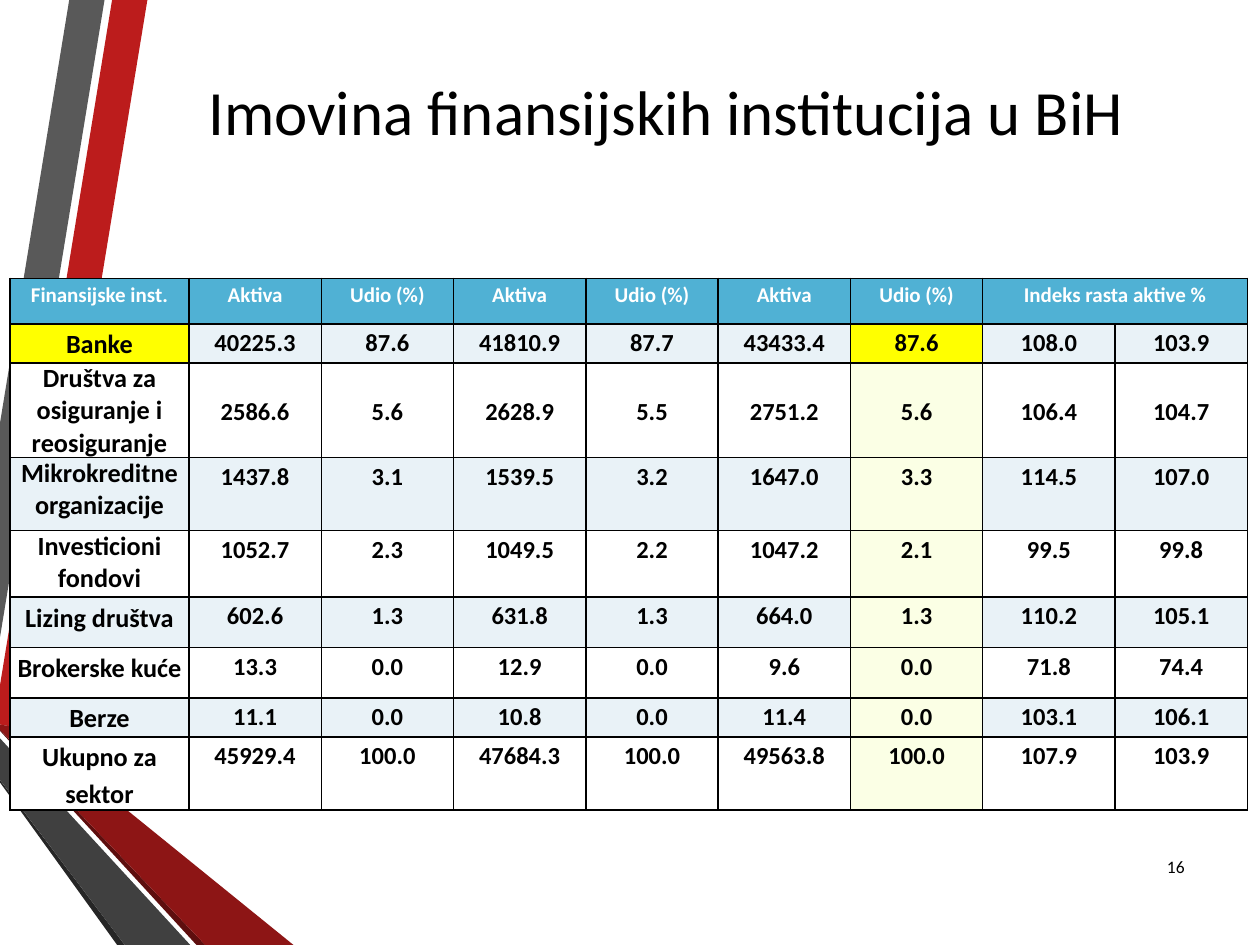
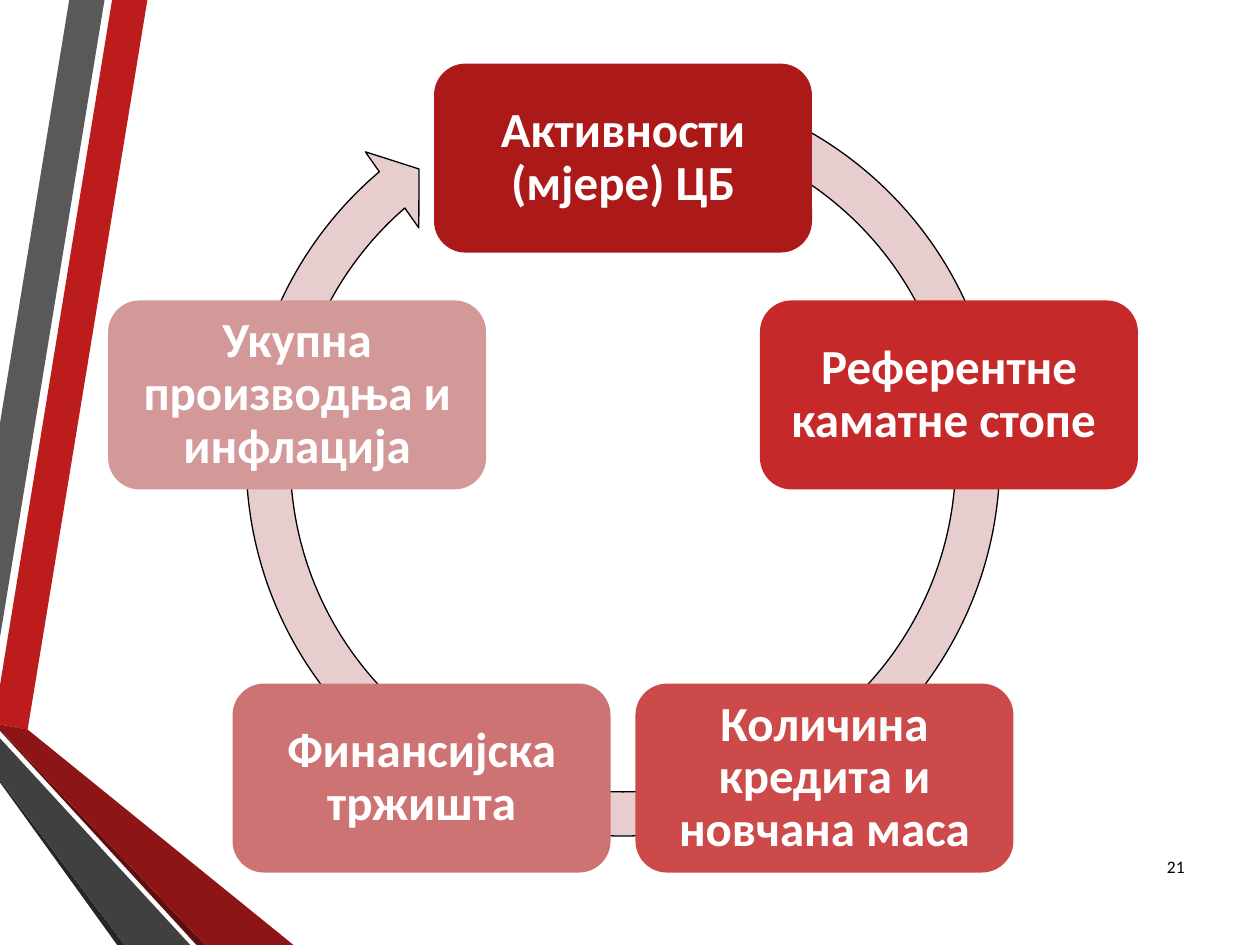
"""Build two slides on financial institutions and monetary policy."""
import math
from dataclasses import dataclass

from lxml import etree
from pptx import Presentation
from pptx.dml.color import RGBColor
from pptx.enum import shapes, text
from pptx.oxml import ns
from pptx.util import Inches, Pt


@dataclass(frozen=True)
class Theme:
    """Shared colours, font and type sizes."""

    font: str = "Calibri"
    black: str = "000000"
    white: str = "FFFFFF"
    header: str = "50B1D4"
    stripe: str = "E9F2F7"
    highlight: str = "FFFF00"
    share: str = "FBFFE5"
    ring: str = "E7CDCD"
    title_size: int = 36
    number_size: int = 10
    header_size: int = 12
    label_size: int = 15
    value_size: int = 14
    step_size: int = 28


THEME = Theme()

BANDS = [
    ("BC1C1C", [(0, 5.44), (0, 5.75), (0.22, 5.79), (1.17, 0), (0.89, 0)]),
    ("595959", [(0.83, 0), (0.55, 0), (0, 3.36), (0, 5.06)]),
    ("262626", [(0, 6.19), (0, 6.21), (0.93, 7.5), (0.99, 7.5)]),
    ("5E0E0E", [(0, 5.79), (0, 5.8), (1.56, 7.5), (1.63, 7.5)]),
    ("8D1515", [(0, 5.79), (1.63, 7.5), (2.33, 7.5), (0.22, 5.79), (0, 5.75)]),
    ("404040", [(0, 6.19), (0.99, 7.5), (1.51, 7.5), (0, 5.86)]),
]

HEADERS = ["Finansijske inst."] + ["Aktiva", "Udio (%)"] * 3 + ["Indeks rasta aktive %"]
INSTITUTIONS = [
    ("Banke", "40225.3 87.6 41810.9 87.7 43433.4 87.6 108.0 103.9"),
    ("Društva za osiguranje i reosiguranje", "2586.6 5.6 2628.9 5.5 2751.2 5.6 106.4 104.7"),
    ("Mikrokreditne organizacije", "1437.8 3.1 1539.5 3.2 1647.0 3.3 114.5 107.0"),
    ("Investicioni fondovi", "1052.7 2.3 1049.5 2.2 1047.2 2.1 99.5 99.8"),
    ("Lizing društva", "602.6 1.3 631.8 1.3 664.0 1.3 110.2 105.1"),
    ("Brokerske kuće", "13.3 0.0 12.9 0.0 9.6 0.0 71.8 74.4"),
    ("Berze", "11.1 0.0 10.8 0.0 11.4 0.0 103.1 106.1"),
    ("Ukupno za sektor", "45929.4 100.0 47684.3 100.0 49563.8 100.0 107.9 103.9"),
]
ROW_HEIGHTS = [0.36, 0.31, 0.75, 0.58, 0.53, 0.4, 0.4, 0.31, 0.58]
INSURANCE_ROW = 2
SINGLE_SPACED_ROWS = (2, 3, 4)
LATEST_SHARE_COLUMN = 6

STEPS = [
    ("Активности (мјере) ЦБ", "AB1919"),
    ("Референтне каматне стопе ", "C52929"),
    ("Количина кредита и новчана маса", "CD4A4A"),
    ("Финансијска тржишта", "CE7373"),
    ("Укупна производња и инфлација", "D39999"),
]


def paint(target, color):
    """Give a shape or cell a solid fill."""
    target.fill.solid()
    target.fill.fore_color.rgb = RGBColor.from_string(color)


def write(frame, content, size, color, bold=False, align=text.PP_ALIGN.CENTER, spacing=None):
    """Write one formatted run into the first paragraph of a frame."""
    frame.word_wrap = True
    paragraph = frame.paragraphs[0]
    paragraph.alignment = align
    if spacing:
        paragraph.line_spacing = spacing
    run = paragraph.add_run()
    run.text = content
    run.font.name = THEME.font
    run.font.size = Pt(size)
    run.font.bold = bold
    run.font.color.rgb = RGBColor.from_string(color)


def add_label(slide, box, content, size, align):
    """Add a vertically centred text box."""
    frame = slide.shapes.add_textbox(*map(Inches, box)).text_frame
    frame.vertical_anchor = text.MSO_ANCHOR.MIDDLE
    write(frame, content, size, THEME.black, align=align)


def add_preset(slide, kind, box, color):
    """Add a filled preset shape without shadow or outline."""
    shape = slide.shapes.add_shape(kind, *map(Inches, box))
    shape.shadow.inherit = False
    paint(shape, color)
    shape.line.fill.background()
    return shape


def add_bands(slide):
    """Draw the folded ribbons along the left edge."""
    for color, points in BANDS:
        start, *others = [(Inches(x), Inches(y)) for x, y in points]
        builder = slide.shapes.build_freeform(*start)
        builder.add_line_segments(others, close=True)
        band = builder.convert_to_shape()
        band.shadow.inherit = False
        paint(band, color)
        band.line.fill.background()


def add_base_slide(presentation, number):
    """Add a blank slide with ribbons and its slide number."""
    slide = presentation.slides.add_slide(presentation.slide_layouts[6])
    add_bands(slide)
    add_label(slide, (9.03, 6.68, 0.47, 0.4), number, THEME.number_size, text.PP_ALIGN.RIGHT)
    return slide


def add_borders(cell):
    """Outline all four sides of a table cell."""
    properties = cell._tc.get_or_add_tcPr()
    for side in ("lnL", "lnR", "lnT", "lnB"):
        line = etree.SubElement(properties, ns.qn(f"a:{side}"), w=str(Pt(1)))
        fill = etree.SubElement(line, ns.qn("a:solidFill"))
        etree.SubElement(fill, ns.qn("a:srgbClr"), val=THEME.black)


def cell_color(row, column):
    """Choose the fill of a cell from its place in the table."""
    if row == 0:
        return THEME.header
    if row == 1 and column in (0, LATEST_SHARE_COLUMN):
        return THEME.highlight
    if column == LATEST_SHARE_COLUMN:
        return THEME.share
    return THEME.stripe if row % 2 else THEME.white


def fill_cell(cell, row, column, content):
    """Format one cell and write its text."""
    cell.margin_left = cell.margin_right = Inches(0.05)
    cell.margin_top = cell.margin_bottom = 0
    add_borders(cell)
    paint(cell, cell_color(row, column))
    if row == INSURANCE_ROW and column:
        cell.vertical_anchor = text.MSO_ANCHOR.MIDDLE
    if not content:
        return
    if row == 0:
        size, color = THEME.header_size, THEME.white
    else:
        size = THEME.value_size if column else THEME.label_size
        color = THEME.black
    single = column == 0 and row in SINGLE_SPACED_ROWS
    write(cell.text_frame, content, size, color, True, spacing=1.0 if single else 1.15)


def add_assets_table(slide, box):
    """Add the table of assets by type of institution."""
    rows = [HEADERS + [""]] + [[name, *values.split()] for name, values in INSTITUTIONS]
    table = slide.shapes.add_table(len(rows), len(rows[0]), *map(Inches, box)).table
    table.first_row = table.horz_banding = False
    for index, column in enumerate(table.columns):
        column.width = Inches(1.05 if index else 1.42)
    for row, height in zip(table.rows, ROW_HEIGHTS):
        row.height = Inches(height)
    for row, contents in enumerate(rows):
        for column, content in enumerate(contents):
            fill_cell(table.cell(row, column), row, column, content)
    table.cell(0, 7).merge(table.cell(0, 8))


def add_policy_cycle(slide, box):
    """Place the steps evenly around a circular arrow."""
    left, top, width, height = box
    arrow = add_preset(slide, shapes.MSO_SHAPE.CIRCULAR_ARROW, box, THEME.ring)
    for index, value in enumerate((0.055, 3.307, 137.632, 173.937, 0.058)):
        arrow.adjustments[index] = value
    arrow.line.color.rgb = RGBColor.from_string(THEME.black)
    arrow.line.width = Pt(0.75)
    radius, step_width, step_height = 2.72, 3, 1.5
    center_x, center_y = left + width / 2, top + height / 2 + 0.33
    for index, (content, color) in enumerate(STEPS):
        angle = 2 * math.pi * index / len(STEPS)
        x = center_x + radius * math.sin(angle) - step_width / 2
        y = center_y - radius * math.cos(angle) - step_height / 2
        step_box = (x, y, step_width, step_height)
        step = add_preset(slide, shapes.MSO_SHAPE.ROUNDED_RECTANGLE, step_box, color)
        frame = step.text_frame
        frame.margin_left = frame.margin_right = Inches(0.12)
        frame.margin_top = frame.margin_bottom = Inches(0.12)
        frame.vertical_anchor = text.MSO_ANCHOR.MIDDLE
        write(frame, content, THEME.step_size, THEME.white, True, spacing=0.9)


def main():
    """Build and save the presentation."""
    presentation = Presentation()
    presentation.slide_width = Inches(10)
    presentation.slide_height = Inches(7.5)

    assets = add_base_slide(presentation, "16")
    add_label(assets, (1.07, 0.5, 8.43, 0.75), "Imovina finansijskih institucija u BiH",
              THEME.title_size, text.PP_ALIGN.CENTER)
    add_assets_table(assets, (0.08, 2.21, 9.82, sum(ROW_HEIGHTS)))

    cycle = add_base_slide(presentation, "21")
    add_policy_cycle(cycle, (1.76, 0.46, 6.37, 6.37))
    presentation.save("out.pptx")


if __name__ == "__main__":
    main()
